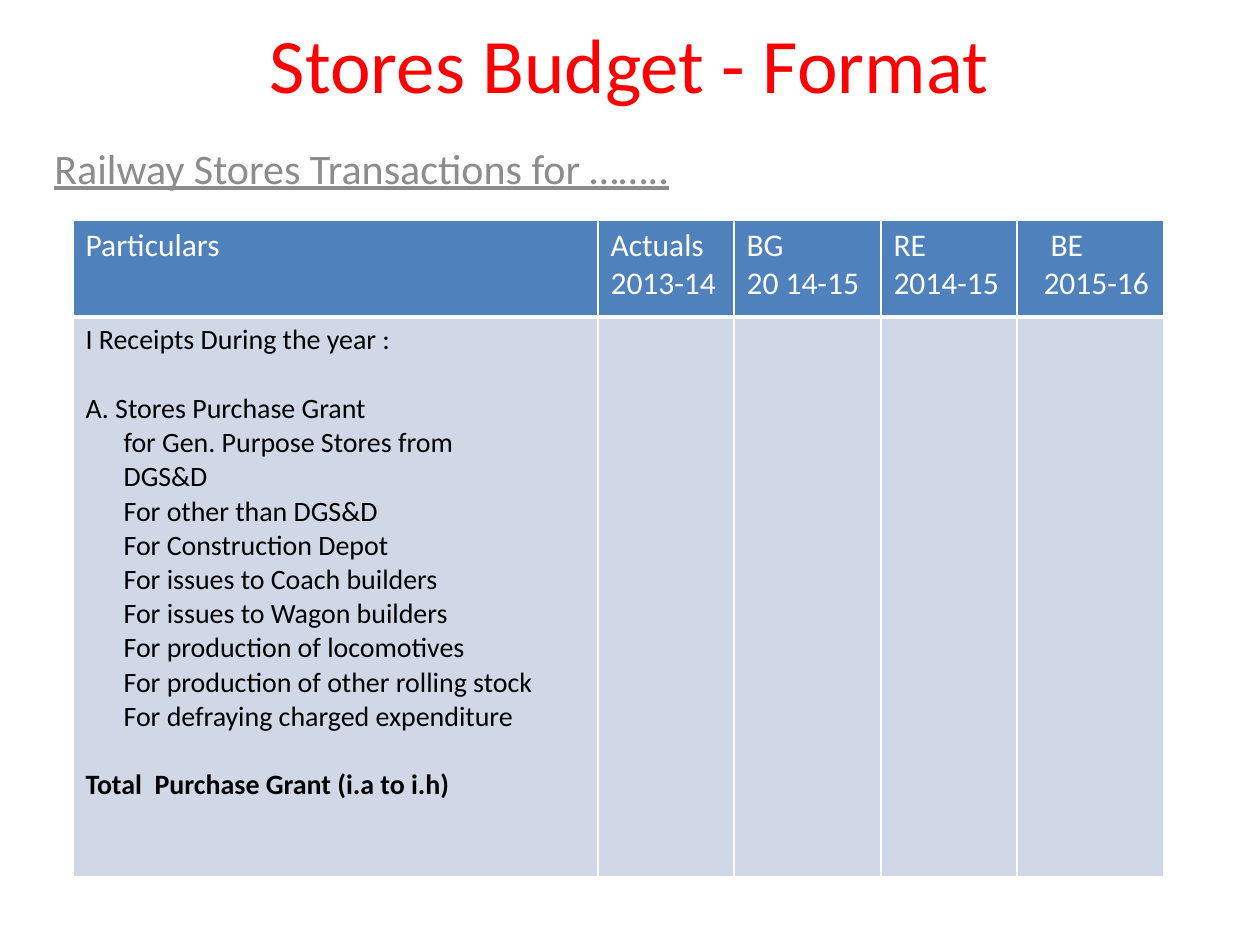
import pptx
import pptx.util
import pptx.dml.color
import pptx.enum.text
import pptx.oxml.ns
import lxml.etree

RGB = pptx.dml.color.RGBColor
ALIGN = pptx.enum.text.PP_ALIGN
ANCHOR = pptx.enum.text.MSO_ANCHOR

RED = RGB(0xFF, 0x00, 0x00)
GREY = RGB(0x8C, 0x8C, 0x8C)
BLUE = RGB(0x4F, 0x81, 0xBD)
PALE = RGB(0xD0, 0xD8, 0xE8)
WHITE = RGB(0xFF, 0xFF, 0xFF)
BLACK = RGB(0x00, 0x00, 0x00)
FONT = "Calibri"

# Table content: each line is (text, indent px, space before pt, bold)
HEADS = [
    [("Particulars", 0)],
    [("Actuals", 0), ("2013-14", 0)],
    [("BG", 0), ("20 14-15", 0)],
    [("RE", 0), ("2014-15", 0)],
    [("BE", 21), ("2015-16", 14)],
]
GRANTS = [
    "for Gen. Purpose Stores from",
    "DGS&D",
    "For other than DGS&D",
    "For Construction Depot",
    "For issues to Coach builders",
    "For issues to Wagon builders",
    "For production of locomotives",
    "For production of other rolling stock",
    "For defraying charged expenditure",
]
GAP = 19.5
LINES = [
    ("I Receipts During the year :", 0, 0, False),
    ("A. Stores Purchase Grant", 0, GAP, False),
    *[(text, 38, 0, False) for text in GRANTS],
    ("Total\u00a0 Purchase Grant (i.a to i.h)".replace("\u00a0", " "), 0, GAP, True),
]
COLS = [525, 136, 147, 136, 147]
ROWS = [97, 560]


def px(num):
    return pptx.util.Emu(round(num * 914400 / 126))


def style(para, size, color, bold=False):
    font = para.font
    font.name, font.size, font.bold = FONT, pptx.util.Pt(size), bold
    font.color.rgb = color


def label(slide, box, text, size, color, align, anchor):
    """Place one line of text in a box."""
    shape = slide.shapes.add_textbox(*map(px, box))
    frame = shape.text_frame
    frame.word_wrap = True
    frame.vertical_anchor = anchor
    para = frame.paragraphs[0]
    para.text, para.alignment = text, align
    style(para, size, color)
    return para


def border(cell, widths):
    """Draw white cell borders, widths in points by side."""
    props = cell._tc.get_or_add_tcPr()
    for pos, side in enumerate("LRTB"):
        line = lxml.etree.Element(
            pptx.oxml.ns.qn(f"a:ln{side}"), w=str(pptx.util.Pt(widths[side])))
        fill = lxml.etree.SubElement(line, pptx.oxml.ns.qn("a:solidFill"))
        lxml.etree.SubElement(fill, pptx.oxml.ns.qn("a:srgbClr"), val=str(WHITE))
        props.insert(pos, line)


def write(cell, lines, size, color):
    """Fill a cell with indented lines."""
    frame = cell.text_frame
    for num, (text, indent, before, bold) in enumerate(lines):
        para = frame.add_paragraph() if num else frame.paragraphs[0]
        para.text = text
        para.space_before = pptx.util.Pt(before)
        style(para, size, color, bold)
        if indent:
            para._p.get_or_add_pPr().set("marL", str(px(indent)))


def budget(slide, left, top):
    """Build the budget table."""
    frame = slide.shapes.add_table(
        len(ROWS), len(COLS), px(left), px(top), px(sum(COLS)), px(sum(ROWS)))
    table = frame.table
    table.first_row = table.horz_banding = False
    for col, width in zip(table.columns, COLS):
        col.width = px(width)
    for row, height in zip(table.rows, ROWS):
        row.height = px(height)

    for num, head in enumerate(HEADS):
        write(table.cell(0, num), [(*line, 0, False) for line in head], 18, WHITE)
    write(table.cell(1, 0), LINES, 16, BLACK)

    looks = [(BLUE, dict(L=1, R=1, T=1, B=3)), (PALE, dict(L=1, R=1, T=3, B=1))]
    for row, (color, widths) in zip(table.rows, looks):
        for cell in row.cells:
            cell.fill.solid()
            cell.fill.fore_color.rgb = color
            border(cell, widths)


def main():
    deck = pptx.Presentation()
    deck.slide_width, deck.slide_height = px(1260), px(945)
    slide = deck.slides.add_slide(deck.slide_layouts[6])

    # Title and subtitle
    label(slide, (94, 10, 1071, 105), "Stores Budget - Format",
          44, RED, ALIGN.CENTER, ANCHOR.MIDDLE)
    sub = label(slide, (42, 136, 1176, 735), "Railway Stores Transactions for ……..",
                24, GREY, ALIGN.JUSTIFY, ANCHOR.TOP)
    sub.font.underline = True

    # Table
    budget(slide, 73, 220)
    deck.save("out.pptx")


if __name__ == "__main__":
    main()
